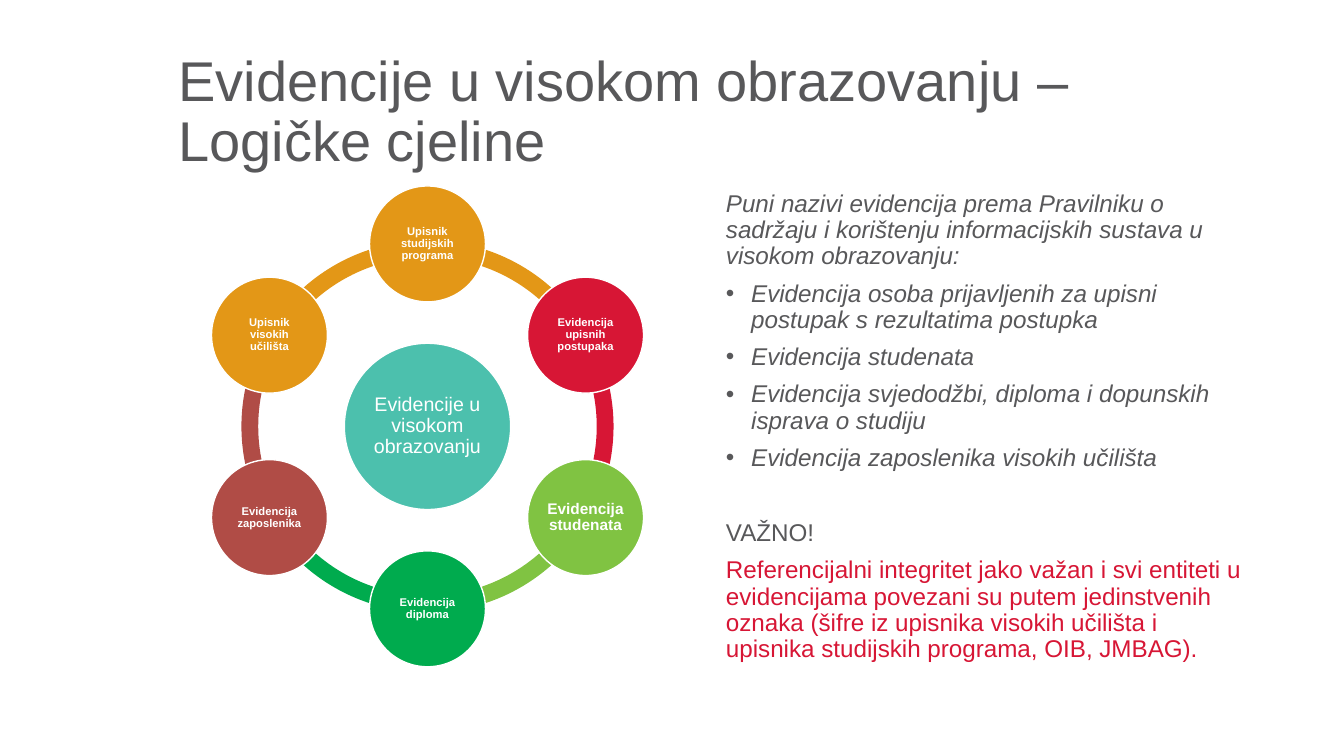
from math import cos, radians, sin
from lxml.etree import SubElement
from pptx import Presentation
from pptx.dml.color import RGBColor
from pptx.enum.shapes import MSO_SHAPE
from pptx.enum.text import MSO_ANCHOR, MSO_AUTO_SIZE, PP_ALIGN
from pptx.oxml.ns import qn
from pptx.util import Inches, Pt

GREY, RED, WHITE, TEAL, ORANGE = "58585A", "D71635", "FFFFFF", "4CC0AD", "E39717"
TITLE = "Evidencije u visokom obrazovanju – Logičke cjeline"
HUB = "Evidencije u visokom obrazovanju"
RECORDS = [
    ("Upisnik studijskih programa", ORANGE, 8),
    ("Evidencija upisnih postupaka", RED, 8),
    ("Evidencija studenata", "80C342", 11),
    ("Evidencija diploma", "00AB4E", 8),
    ("Evidencija zaposlenika", "B04C46", 8),
    ("Upisnik visokih učilišta", ORANGE, 8),
]
# text, bulleted, italic, colour, space before
BODY = [
    ("Puni nazivi evidencija prema Pravilniku o sadržaju i korištenju "
     "informacijskih sustava u visokom obrazovanju:", False, True, GREY, 0),
    ("Evidencija osoba prijavljenih za upisni postupak s rezultatima postupka", True, True, GREY, 8),
    ("Evidencija studenata", True, True, GREY, 8),
    ("Evidencija svjedodžbi, diploma i dopunskih isprava o studiju", True, True, GREY, 8),
    ("Evidencija zaposlenika visokih učilišta", True, True, GREY, 8),
    ("VAŽNO!", False, False, GREY, 35),
    ("Referencijalni integritet jako važan i svi entiteti u evidencijama povezani su "
     "putem jedinstvenih oznaka (šifre iz upisnika visokih učilišta i upisnika "
     "studijskih programa, OIB, JMBAG).", False, False, RED, 8),
]
CENTER_X, CENTER_Y, ORBIT = 4.24, 4.23, 1.81
RING_SIZE, HUB_SIZE, NODE_SIZE = 3.69, 1.65, 1.15
STEP = 360 / len(RECORDS)
ANGLE_UNIT = 0.6


def color(value):
    return RGBColor.from_string(value)


def format_paragraph(paragraph, size, font_color, bold=False, italic=False):
    paragraph.line_spacing = 0.9
    font = paragraph.font
    font.name, font.size = "Arial", Pt(size)
    font.bold, font.italic = bold, italic
    font.color.rgb = color(font_color)


def place(shape, left, top, width, height):
    shape.left, shape.top = Inches(left), Inches(top)
    shape.width, shape.height = Inches(width), Inches(height)


def add_round(kind, center_x, center_y, size, fill):
    shape = slide.shapes.add_shape(
        kind, Inches(center_x - size / 2), Inches(center_y - size / 2), Inches(size), Inches(size))
    shape.shadow.inherit = False
    shape.fill.solid()
    shape.fill.fore_color.rgb = color(fill)
    shape.line.fill.background()
    return shape


def add_circle(text, center_x, center_y, size, fill, font_size, bold):
    circle = add_round(MSO_SHAPE.OVAL, center_x, center_y, size, fill)
    circle.line.color.rgb = color(WHITE)
    circle.line.width = Pt(1)
    frame = circle.text_frame
    frame.text = text
    frame.word_wrap = True
    frame.vertical_anchor = MSO_ANCHOR.MIDDLE
    frame.margin_left = frame.margin_right = Inches(0.01)
    frame.margin_top = frame.margin_bottom = Inches(0.01)
    frame.paragraphs[0].alignment = PP_ALIGN.CENTER
    format_paragraph(frame.paragraphs[0], font_size, WHITE, bold)


def set_bullet(paragraph, bulleted):
    properties = paragraph._p.get_or_add_pPr()
    indent = Inches(0.25) if bulleted else 0
    properties.set("marL", str(indent))
    properties.set("indent", str(-indent))
    if bulleted:
        SubElement(properties, qn("a:buFont"), typeface="Arial")
        SubElement(properties, qn("a:buChar"), char="•")
    else:
        SubElement(properties, qn("a:buNone"))


presentation = Presentation()
presentation.slide_width, presentation.slide_height = Inches(13.33), Inches(7.5)
slide = presentation.slides.add_slide(presentation.slide_layouts[1])

title = slide.shapes.title
place(title, 1.67, 0.4, 10.75, 1.45)
title.text_frame.text = TITLE
title.text_frame.auto_size = MSO_AUTO_SIZE.NONE
title.text_frame.vertical_anchor = MSO_ANCHOR.MIDDLE
title.text_frame.paragraphs[0].alignment = PP_ALIGN.LEFT
format_paragraph(title.text_frame.paragraphs[0], 40, GREY)

angles = [(270 + index * STEP) % 360 for index in range(len(RECORDS))]
for angle, (text, fill, size) in zip(angles, RECORDS):
    arc = add_round(MSO_SHAPE.BLOCK_ARC, CENTER_X, CENTER_Y, RING_SIZE, fill)
    arc.adjustments[0] = angle * ANGLE_UNIT
    arc.adjustments[1] = (angle + STEP) % 360 * ANGLE_UNIT
    arc.adjustments[2] = 0.045

add_circle(HUB, CENTER_X, CENTER_Y, HUB_SIZE, TEAL, 14, False)
for angle, (text, fill, size) in zip(angles, RECORDS):
    add_circle(text, CENTER_X + ORBIT * cos(radians(angle)),
               CENTER_Y + ORBIT * sin(radians(angle)), NODE_SIZE, fill, size, True)

body = slide.placeholders[1]
place(body, 7.1, 1.85, 5.32, 4.76)
frame = body.text_frame
frame.text = "\n".join(entry[0] for entry in BODY)
frame.auto_size = MSO_AUTO_SIZE.NONE
for paragraph, (text, bulleted, italic, font_color, space) in zip(frame.paragraphs, BODY):
    set_bullet(paragraph, bulleted)
    paragraph.space_before = Pt(space)
    format_paragraph(paragraph, 17.3, font_color, italic=italic)

presentation.save("out.pptx")
